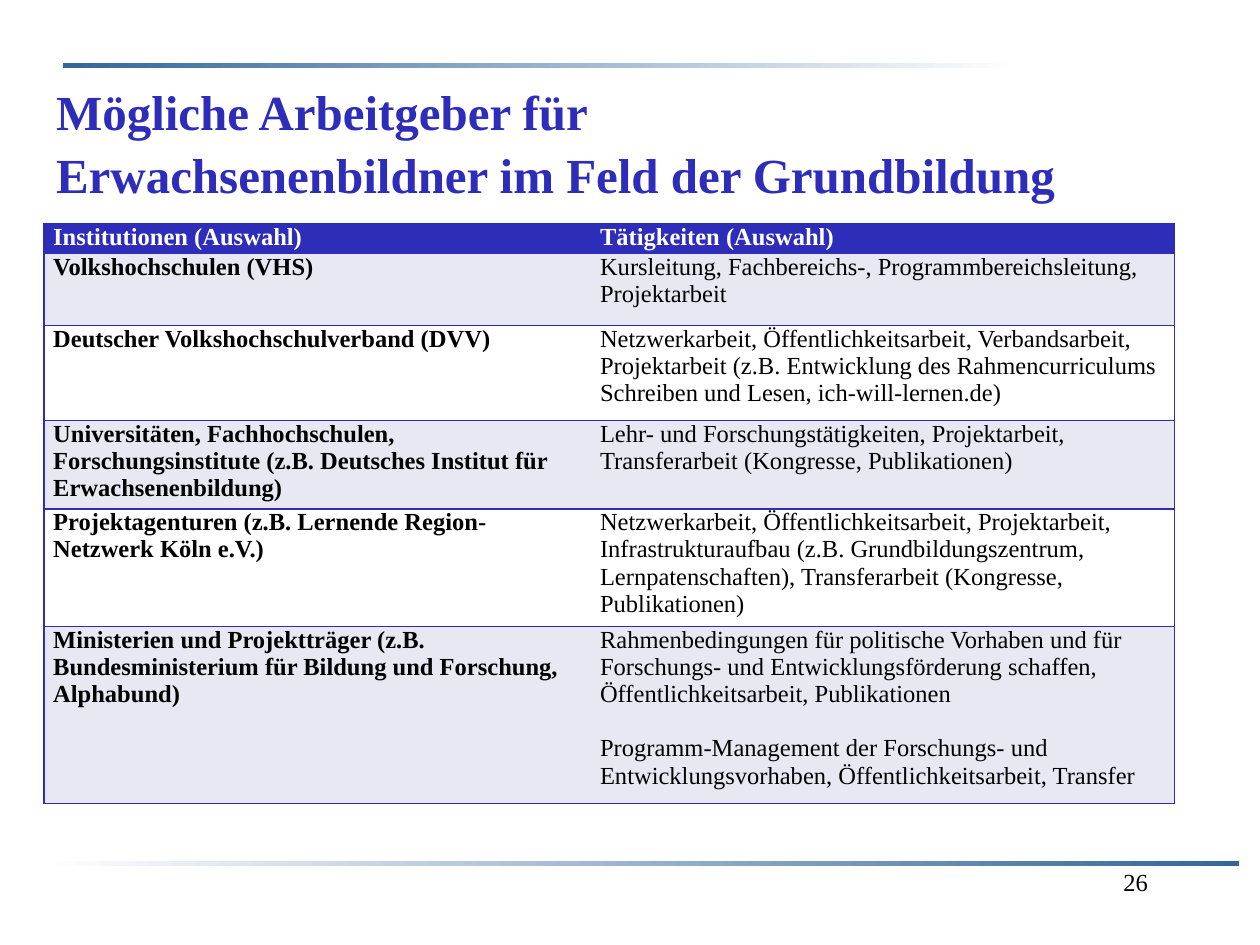
from lxml import etree
from pptx import Presentation
from pptx.dml.color import RGBColor
from pptx.enum.shapes import MSO_SHAPE as Shape
from pptx.enum.text import PP_ALIGN as Align
from pptx.oxml.ns import qn
from pptx.util import Pt

FONT = "Times New Roman"
BLUE = RGBColor(0x2D, 0x2D, 0xB9)
STEEL = RGBColor(0x33, 0x66, 0x99)
PALE = RGBColor(0xE8, 0xE8, 0xF3)
WHITE = RGBColor(0xFF, 0xFF, 0xFF)
BLACK = RGBColor(0, 0, 0)


def add_text(paragraph, text, size, color, bold=False):
    run = paragraph.add_run()
    run.text = text
    run.font.name = FONT
    run.font.size = Pt(size)
    run.font.bold = bold
    run.font.color.rgb = color


def add_border(cell, side, color):
    """Draw a 1 pt line on one side (L, R, T or B), or none if color is None."""
    properties = cell._tc.get_or_add_tcPr()
    line = etree.SubElement(properties, qn(f"a:ln{side}"), w=str(Pt(1)))
    if color is None:
        etree.SubElement(line, qn("a:noFill"))
    else:
        fill = etree.SubElement(line, qn("a:solidFill"))
        etree.SubElement(fill, qn("a:srgbClr"), val=str(color))


presentation = Presentation()
presentation.slide_width = Pt(720)
presentation.slide_height = Pt(540)
slide = presentation.slides.add_slide(presentation.slide_layouts[6])

# Fading bars above and below the content
for left, top, width, colors in (
    (36, 36, 546, (STEEL, WHITE)),
    (24, 492, 684, (WHITE, STEEL)),
):
    bar = slide.shapes.add_shape(Shape.RECTANGLE, Pt(left), Pt(top), Pt(width), Pt(3))
    bar.shadow.inherit = False
    bar.line.fill.background()
    bar.fill.gradient()
    bar.fill.gradient_angle = 0
    for stop, color in zip(bar.fill.gradient_stops, colors):
        stop.color.rgb = color

# Page number
number_box = slide.shapes.add_textbox(Pt(513), Pt(492), Pt(150), Pt(36))
number_box.text_frame.word_wrap = True
number = number_box.text_frame.paragraphs[0]
number.alignment = Align.RIGHT
add_text(number, "26", 14, BLACK)

# Title
title_frame = slide.shapes.add_textbox(Pt(25), Pt(40.5), Pt(718), Pt(75)).text_frame
title_frame.word_wrap = True
title_lines = ("Mögliche Arbeitgeber für", "Erwachsenenbildner im Feld der Grundbildung")
for index, text in enumerate(title_lines):
    paragraph = title_frame.add_paragraph() if index else title_frame.paragraphs[0]
    paragraph.line_spacing = 1.07
    add_text(paragraph, text, 28, BLUE, bold=True)

# Table: row height, institution, activities (one string per paragraph)
rows = (
    (17, "Institutionen (Auswahl)", ["Tätigkeiten (Auswahl)"]),
    (41, "Volkshochschulen (VHS)",
     ["Kursleitung, Fachbereichs-, Programmbereichsleitung, Projektarbeit"]),
    (54.3, "Deutscher Volkshochschulverband (DVV)",
     ["Netzwerkarbeit, Öffentlichkeitsarbeit, Verbandsarbeit, Projektarbeit "
      "(z.B. Entwicklung des Rahmencurriculums Schreiben und Lesen, ich-will-lernen.de)"]),
    (50.6, "Universitäten, Fachhochschulen, Forschungsinstitute "
     "(z.B. Deutsches Institut für Erwachsenenbildung)",
     ["Lehr- und Forschungstätigkeiten, Projektarbeit, "
      "Transferarbeit (Kongresse, Publikationen)"]),
    (67.1, "Projektagenturen (z.B. Lernende Region-Netzwerk Köln e.V.)",
     ["Netzwerkarbeit, Öffentlichkeitsarbeit, Projektarbeit, Infrastrukturaufbau "
      "(z.B. Grundbildungszentrum, Lernpatenschaften), "
      "Transferarbeit (Kongresse, Publikationen)"]),
    (101, "Ministerien und Projektträger "
     "(z.B. Bundesministerium für Bildung und Forschung, Alphabund)",
     ["Rahmenbedingungen für politische Vorhaben und für Forschungs- und "
      "Entwicklungsförderung schaffen, Öffentlichkeitsarbeit, Publikationen",
      "Programm-Management der Forschungs- und Entwicklungsvorhaben, "
      "Öffentlichkeitsarbeit, Transfer"]),
)
column_widths = (312.5, 333.5)
table = slide.shapes.add_table(
    len(rows), 2, Pt(25.2), Pt(128), Pt(sum(column_widths)), Pt(sum(row[0] for row in rows))
).table
for column, width in zip(table.columns, column_widths):
    column.width = Pt(width)

for row_index, (height, institution, activities) in enumerate(rows):
    table.rows[row_index].height = Pt(height)
    is_header = row_index == 0
    fill_color = BLUE if is_header else PALE if row_index % 2 else WHITE
    for column_index, texts in enumerate(([institution], activities)):
        cell = table.cell(row_index, column_index)
        cell.margin_left = cell.margin_right = Pt(5.2)
        cell.margin_top = cell.margin_bottom = Pt(0)
        add_border(cell, "L", None if column_index else BLUE)
        add_border(cell, "R", BLUE if column_index else None)
        add_border(cell, "T", BLUE)
        add_border(cell, "B", BLUE)
        cell.fill.solid()
        cell.fill.fore_color.rgb = fill_color
        for index, text in enumerate(texts):
            paragraph = cell.text_frame.paragraphs[0]
            if index:
                paragraph = cell.text_frame.add_paragraph()
                paragraph.space_before = Pt(15.5)
            add_text(paragraph, text, 14, WHITE if is_header else BLACK,
                     bold=is_header or column_index == 0)

presentation.save("out.pptx")
